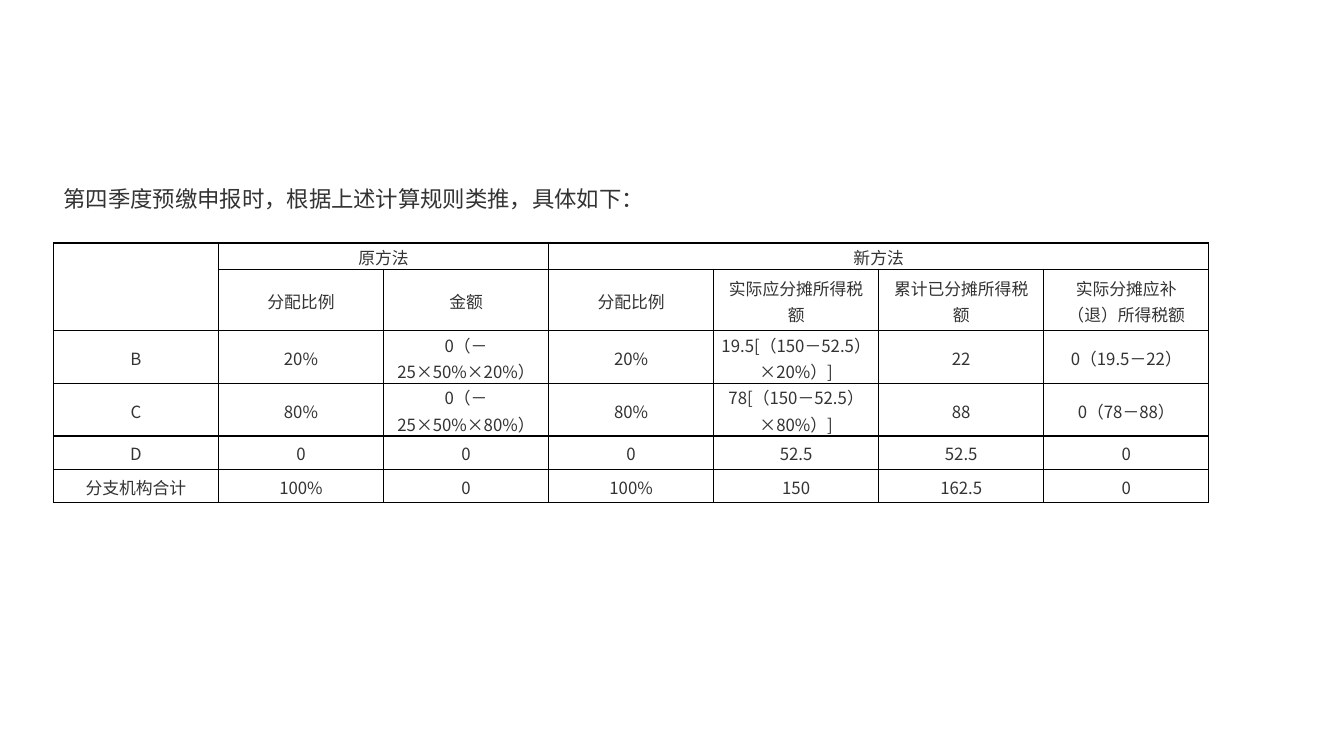
from lxml import etree
from pptx import Presentation, util as u
from pptx.dml.color import RGBColor
from pptx.enum import text as t
from pptx.oxml import ns

FONT, INK, LINE = "Noto Sans CJK SC", "333333", "000000"
INTRO = "第四季度预缴申报时，根据上述计算规则类推，具体如下："
ROWS = [
    ["", "原方法", "", "新方法", "", "", ""],
    ["", "分配比例", "金额", "分配比例", "实际应分摊所得税额",
     "累计已分摊所得税额", "实际分摊应补（退）所得税额"],
    ["B", "20%", "0（－25×50%×20%）", "20%",
     "19.5[（150－52.5）×20%）]", "22", "0（19.5－22）"],
    ["C", "80%", "0（－25×50%×80%）", "80%",
     "78[（150－52.5）×80%）]", "88", "0（78－88）"],
    ["D", "0", "0", "0", "52.5", "52.5", "0"],
    ["分支机构合计", "100%", "0", "100%", "150", "162.5", "0"],
]
SPANS = [((0, 0), (1, 0)), ((0, 1), (0, 2)), ((0, 3), (0, 6))]
HIGH = [0.22, 0.61, 0.21, 0.2, 0.33, 0.33]
LEFT, TOP, WIDE = 0.53, 2.41, 11.46


def color(hex):
    return RGBColor.from_string(hex)


def put(frame, words, size=12, align=t.PP_ALIGN.CENTER, before=0):
    frame.word_wrap = True
    para = frame.paragraphs[0]
    para.alignment = align
    para.line_spacing = u.Pt(18.8)
    para.space_before = u.Pt(before)
    run = para.add_run()
    run.text = words
    font = run.font
    font.name, font.size, font.bold = FONT, u.Pt(size), False
    font.color.rgb = color(INK)
    east = etree.SubElement(font._element, ns.qn("a:ea"))
    east.set("typeface", FONT)


def border(cell):
    props = cell._tc.get_or_add_tcPr()
    for spot, side in enumerate(("lnL", "lnR", "lnT", "lnB")):
        line = etree.Element(ns.qn("a:" + side), w=str(u.Pt(1)))
        fill = etree.SubElement(line, ns.qn("a:solidFill"))
        etree.SubElement(fill, ns.qn("a:srgbClr"), val=LINE)
        props.insert(spot, line)


def main():
    deck = Presentation()
    deck.slide_width, deck.slide_height = u.Inches(13.33), u.Inches(7.5)
    slide = deck.slides.add_slide(deck.slide_layouts[5])

    intro = slide.shapes.title
    intro.left, intro.top = u.Inches(LEFT), u.Inches(1.79)
    intro.width, intro.height = u.Inches(6.22), u.Inches(0.36)
    frame = intro.text_frame
    put(frame, INTRO, size=16, align=t.PP_ALIGN.JUSTIFY, before=15)
    frame.vertical_anchor = t.MSO_ANCHOR.TOP
    frame.auto_size = t.MSO_AUTO_SIZE.SHAPE_TO_FIT_TEXT

    grid = slide.shapes.add_table(
        len(ROWS), len(ROWS[0]), u.Inches(LEFT), u.Inches(TOP),
        u.Inches(WIDE), u.Inches(sum(HIGH))).table
    grid.first_row = grid.horz_banding = False
    for row, high in zip(grid.rows, HIGH):
        row.height = u.Inches(high)
    for r, row in enumerate(ROWS):
        for c, words in enumerate(row):
            cell = grid.cell(r, c)
            cell.margin_left = cell.margin_right = u.Inches(0.07)
            cell.margin_top = cell.margin_bottom = 0
            cell.vertical_anchor = t.MSO_ANCHOR.MIDDLE
            cell.fill.background()
            put(cell.text_frame, words)
            border(cell)
    for start, end in SPANS:
        grid.cell(*start).merge(grid.cell(*end))

    deck.save("out.pptx")


if __name__ == "__main__":
    main()
